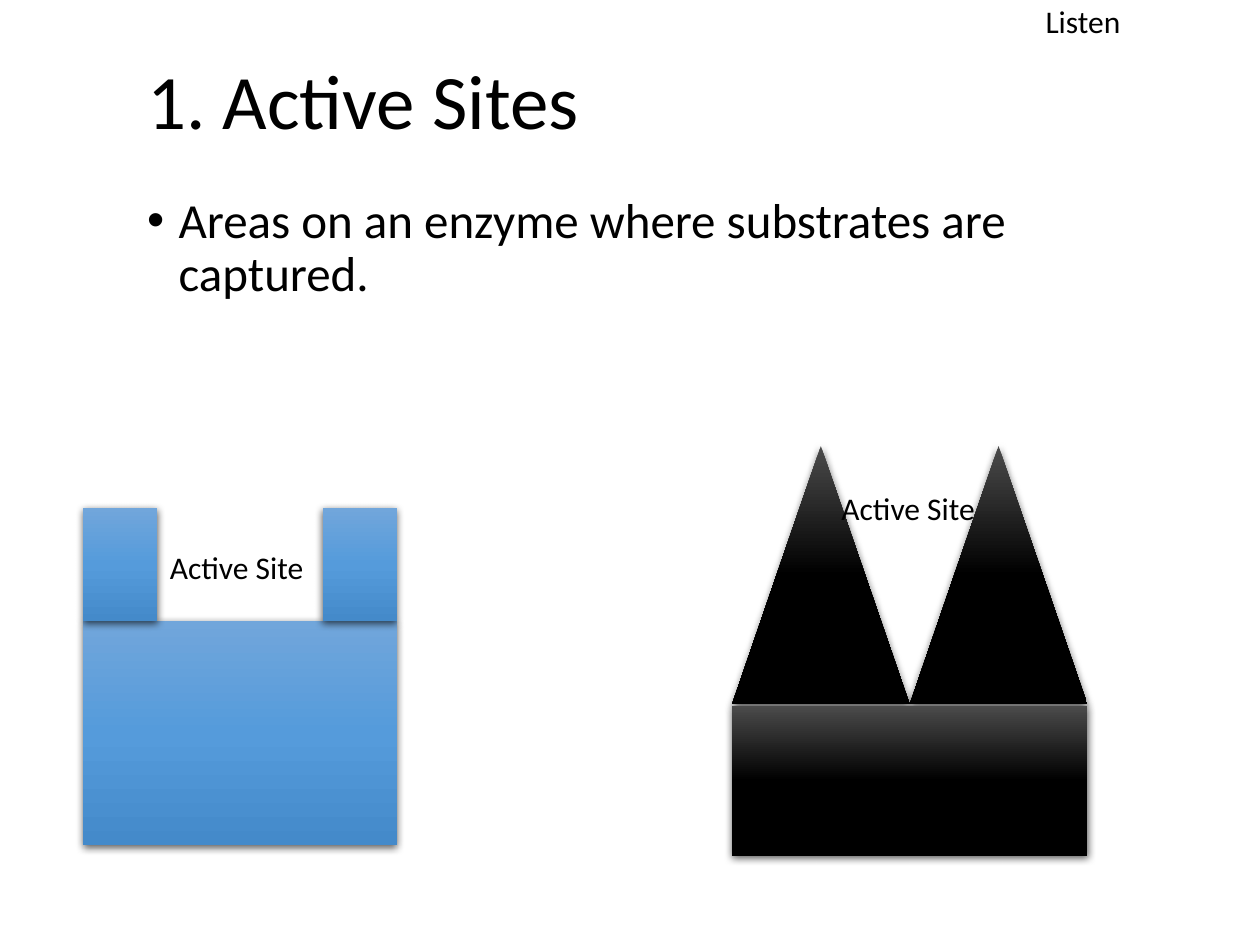
from copy import deepcopy

from lxml.etree import SubElement
from pptx import Presentation
from pptx.dml.color import RGBColor
from pptx.enum.shapes import MSO_SHAPE
from pptx.enum.text import MSO_ANCHOR, MSO_AUTO_SIZE
from pptx.oxml.ns import qn
from pptx.util import Inches, Pt

FONT = "Calibri"
BLACK = RGBColor(0x00, 0x00, 0x00)
BLUES = (RGBColor(0x71, 0xA6, 0xDB), RGBColor(0x55, 0x9B, 0xDB), RGBColor(0x44, 0x8A, 0xCA))
DARKS = (RGBColor(0x4B, 0x4B, 0x4B), BLACK, BLACK)


def add_text(shapes, text, left, top, width, height, size=18, spacing=None,
             anchor=MSO_ANCHOR.TOP, wrap=True, bullet=False):
    tf = shapes.add_textbox(*map(Inches, (left, top, width, height))).text_frame
    tf.word_wrap = wrap
    tf.auto_size = MSO_AUTO_SIZE.NONE
    tf.vertical_anchor = anchor
    p = tf.paragraphs[0]
    if spacing:
        p.line_spacing = spacing
    if bullet:
        add_bullet(p)
    r = p.add_run()
    r.text = text
    r.font.name = FONT
    r.font.size = Pt(size)
    r.font.color.rgb = BLACK


def add_bullet(p, indent=0.25):
    p.space_before = Pt(10)
    pPr = p._p.get_or_add_pPr()
    pPr.set("marL", str(Inches(indent)))
    pPr.set("indent", str(-Inches(indent)))
    SubElement(pPr, qn("a:buFont"), typeface="Arial")
    SubElement(pPr, qn("a:buChar"), char="•")


def add_shadow(sp):
    """Cast a soft black shadow straight down."""
    effects = SubElement(sp._element.spPr, qn("a:effectLst"))
    shadow = SubElement(effects, qn("a:outerShdw"), blurRad=str(Pt(4.5)), dist=str(Pt(1.5)),
                        dir="5400000", algn="ctr", rotWithShape="0")
    color = SubElement(shadow, qn("a:srgbClr"), val=str(BLACK))
    SubElement(color, qn("a:alpha"), val="63000")


def add_block(shapes, kind, left, top, width, height, colors):
    """Add an unlined shape with a three-stop vertical gradient and a shadow."""
    sp = shapes.add_shape(kind, *map(Inches, (left, top, width, height)))
    sp.fill.gradient()
    sp.fill.gradient_angle = 270
    first = sp._element.spPr.find(".//" + qn("a:gs"))
    first.addnext(deepcopy(first))
    for stop, position, color in zip(sp.fill.gradient_stops, (0, 0.5, 1), colors):
        stop.position = position
        stop.color.rgb = color
    sp.line.fill.background()
    add_shadow(sp)


def add_notched_enzyme(shapes, left=0.66, top=4.03, width=2.49):
    arm_width, arm_height, base_height = 0.59, 0.9, 1.78
    parts = shapes.add_group_shape().shapes
    add_block(parts, MSO_SHAPE.RECTANGLE, left, top + arm_height, width, base_height, BLUES)
    for x in (left, left + width - arm_width):
        add_block(parts, MSO_SHAPE.RECTANGLE, x, top, arm_width, arm_height, BLUES)


def add_pointed_enzyme(shapes, left=5.81, top=3.54):
    tooth_width, tooth_height, base_height = 1.41, 2.05, 1.19
    for i in range(2):
        add_block(shapes, MSO_SHAPE.ISOSCELES_TRIANGLE, left + i * tooth_width, top,
                  tooth_width, tooth_height, DARKS)
    add_block(shapes, MSO_SHAPE.RECTANGLE, left, top + tooth_height + 0.01,
              2 * tooth_width, base_height, DARKS)


def main():
    prs = Presentation()
    prs.slide_width, prs.slide_height = Inches(10), Inches(7.5)
    s = prs.slides.add_slide(prs.slide_layouts[6])

    add_text(s.shapes, "1. Active Sites", 1.07, 0.38, 8.43, 0.9, size=44, spacing=0.9,
             anchor=MSO_ANCHOR.MIDDLE)
    add_text(s.shapes, "Areas on an enzyme where substrates are captured.",
             1.07, 1.51, 8.43, 5.05, size=28, spacing=0.9, bullet=True)
    add_notched_enzyme(s.shapes)
    add_pointed_enzyme(s.shapes)
    for left, top in ((1.25, 4.3), (6.58, 3.83)):
        add_text(s.shapes, "Active Site", left, top, 1.32, 0.4)
    add_text(s.shapes, "Listen", 8.2, -0.03, 2.27, 0.4)

    prs.save("out.pptx")


if __name__ == "__main__":
    main()
